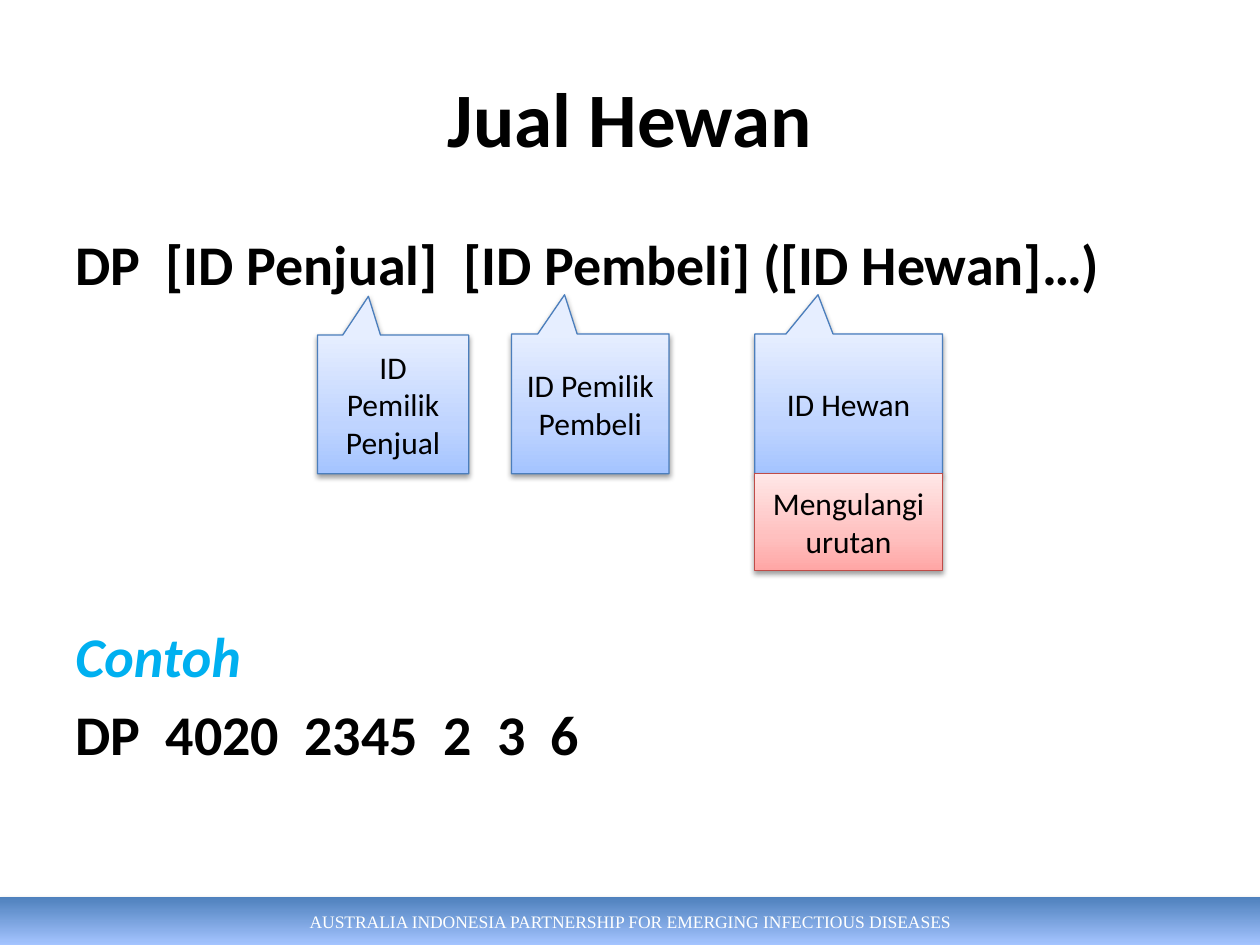
import pptx
import pptx.util
import pptx.dml.color
import pptx.enum.shapes
import pptx.enum.text
import pptx.oxml
import pptx.oxml.ns
from lxml import etree

Inches, Pt = pptx.util.Inches, pptx.util.Pt
SHAPE = pptx.enum.shapes.MSO_SHAPE
ALIGN = pptx.enum.text.PP_ALIGN
MIDDLE = pptx.enum.text.MSO_ANCHOR.MIDDLE
qn = pptx.oxml.ns.qn

BLACK = "000000"
TITLE = "Jual Hewan"
FOOTER = "AUSTRALIA INDONESIA PARTNERSHIP FOR EMERGING INFECTIOUS DISEASES"
FORMAT_LINES = [("DP  [ID Penjual]  [ID Pembeli] ([ID Hewan]…)", BLACK, False)]
EXAMPLE_LINES = [("Contoh", "00B0F0", True), ("DP  4020  2345  2  3  6", BLACK, False)]

BLUE = ([(0, "A4C4FF"), (35, "BFD4FF"), (100, "E6EEFF")], "4B7EBC")
RED = ([(0, "FFA6A5"), (35, "FFC0BF"), (100, "FFE7E7")], "BF4C48")
FOOTER_STOPS = [(0, "4F81BD"), (100, "A4C4FF")]
CALLOUT, BOX = SHAPE.RECTANGULAR_CALLOUT, SHAPE.RECTANGLE
LABELS = [
    (CALLOUT, (2.52, 2.66, 1.2, 1.1), ["ID Pemilik", "Penjual"], BLUE),
    (CALLOUT, (4.06, 2.65, 1.25, 1.11), ["ID Pemilik Pembeli"], BLUE),
    (CALLOUT, (5.99, 2.65, 1.49, 1.11), ["ID Hewan"], BLUE),
    (BOX, (5.99, 3.76, 1.49, 0.77), ["Mengulangi urutan"], RED),
]


def rgb(value):
    return pptx.dml.color.RGBColor.from_string(value)


def add_line(frame, index, text, size, color, font="Calibri", bold=False,
             italic=False, align=ALIGN.CENTER):
    paragraph = frame.add_paragraph() if index else frame.paragraphs[0]
    paragraph.alignment = align
    run = paragraph.add_run()
    run.text = text
    run.font.name, run.font.size = font, Pt(size)
    run.font.bold, run.font.italic = bold, italic
    run.font.color.rgb = rgb(color)
    return paragraph


def add_color(parent, color):
    return etree.SubElement(parent, qn("a:srgbClr"), val=color)


def add_gradient_shape(slide, kind, box, stops, angle, shadow):
    shape = slide.shapes.add_shape(kind, *map(Inches, box))
    shape.fill.gradient()
    shape.fill.gradient_angle = angle
    stop_list = shape._element.spPr.find(".//" + qn("a:gsLst"))
    for stop in list(stop_list):
        stop_list.remove(stop)
    for percent, color in stops:
        add_color(etree.SubElement(stop_list, qn("a:gs"), pos=str(percent * 1000)), color)
    shape.shadow.inherit = False
    alpha, blur, distance = shadow
    outer = etree.SubElement(
        shape._element.spPr.find(qn("a:effectLst")), qn("a:outerShdw"),
        blurRad=str(Pt(blur)), dist=str(Pt(distance)), dir="5400000", rotWithShape="0")
    etree.SubElement(add_color(outer, BLACK), qn("a:alpha"), val=str(alpha * 1000))
    shape.text_frame.word_wrap = True
    shape.text_frame.vertical_anchor = MIDDLE
    return shape


def add_body(slide, top, height, lines):
    frame = slide.shapes.add_textbox(*map(Inches, (0.5, top, 9, height))).text_frame
    frame.word_wrap = True
    for index, (text, color, italic) in enumerate(lines):
        paragraph = add_line(frame, index, text, 32, color, bold=True,
                             italic=italic, align=ALIGN.LEFT)
        if index:
            paragraph.space_before = Pt(6.4)


def main():
    deck = pptx.Presentation()
    deck.slide_width, deck.slide_height = Inches(10), Inches(7.5)
    slide = deck.slides.add_slide(deck.slide_layouts[5])

    footer = add_gradient_shape(slide, BOX, (0, 7.12, 10, 0.38), FOOTER_STOPS, 270,
                                (35, 3.1, 1.8))
    footer.line.fill.background()
    add_line(footer.text_frame, 0, FOOTER, 10, "FFFFFF", font="Times New Roman")

    title = slide.shapes.title
    title.left, title.top, title.width, title.height = map(Inches, (0.5, 0.3, 9, 1.25))
    title.text_frame.vertical_anchor = MIDDLE
    add_line(title.text_frame, 0, TITLE, 44, BLACK, bold=True)

    add_body(slide, 1.77, 0.65, FORMAT_LINES)
    add_body(slide, 4.88, 1.3, EXAMPLE_LINES)

    for kind, box, lines, (stops, outline) in LABELS:
        label = add_gradient_shape(slide, kind, box, stops, 90, (38, 3.1, 1.6))
        label.line.color.rgb = rgb(outline)
        label.line.width = Pt(0.75)
        if kind == CALLOUT:
            label.adjustments[0], label.adjustments[1] = -0.163, -0.78
        for index, text in enumerate(lines):
            add_line(label.text_frame, index, text, 18, BLACK)

    deck.save("out.pptx")


if __name__ == "__main__":
    main()
